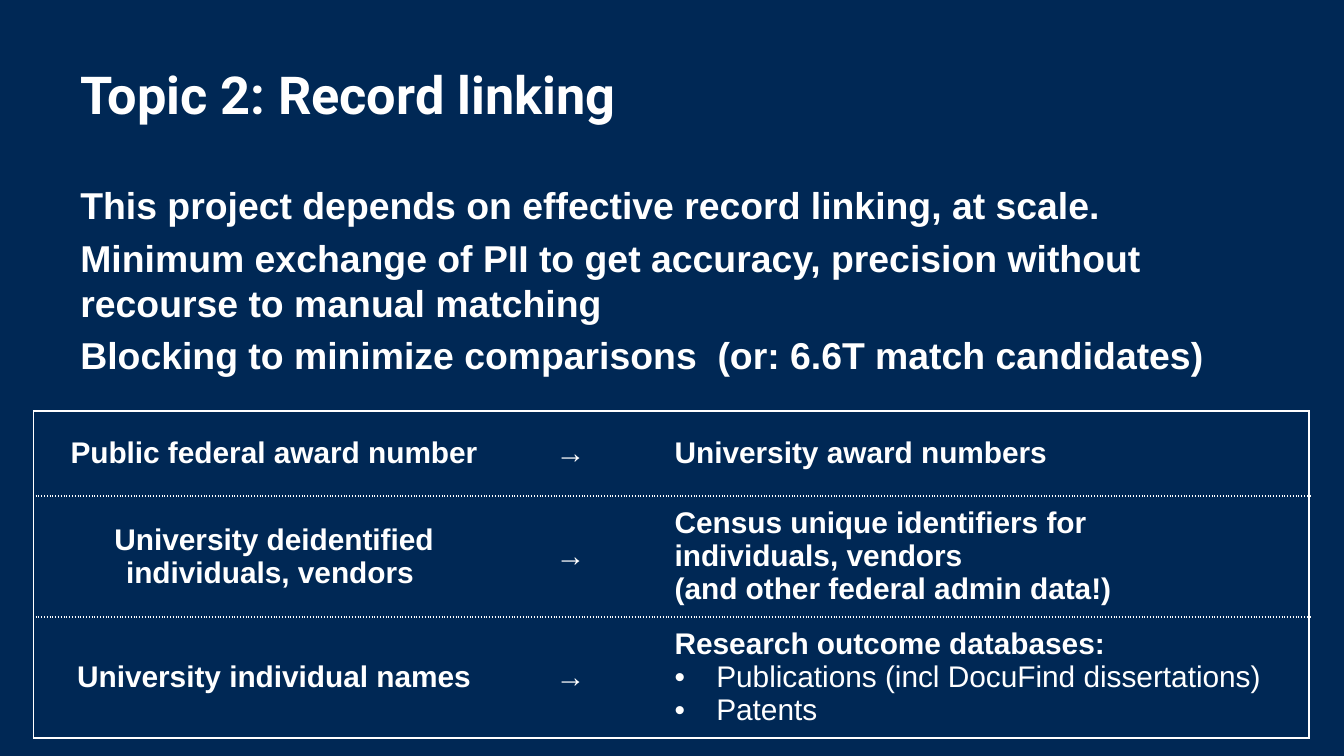
from lxml.etree import SubElement
from pptx import Presentation
from pptx.dml.color import RGBColor
from pptx.enum.text import MSO_ANCHOR as Anchor, PP_ALIGN as Align
from pptx.oxml.ns import qn
from pptx.util import Inches, Pt

NAVY, WHITE = "002855", "FFFFFF"

STATEMENTS = [
    "This project depends on effective record linking, at scale.",
    "Minimum exchange of PII to get accuracy, precision without recourse to manual matching",
    "Blocking to minimize comparisons  (or: 6.6T match candidates)",
]
# Each row: source, targets; targets after the first are bullets.
LINKS = [
    ("Public federal award number", ["University award numbers"]),
    ("University deidentified\vindividuals, vendors ",
     ["Census unique identifiers for \vindividuals, vendors \v(and other federal admin data!)"]),
    ("University individual names",
     ["Research outcome databases:",
      "Publications (incl DocuFind dissertations)", "Patents"]),
]
COLUMN_WIDTHS = [3.58, 0.83, 5.08]
ROW_HEIGHTS = [0.63, 0.85, 0.88]


def color(hex_code):
    return RGBColor.from_string(hex_code)


def place(shape, left, top, width, height):
    shape.left, shape.top = Inches(left), Inches(top)
    shape.width, shape.height = Inches(width), Inches(height)


def format_runs(para, size, font="Arial", bold=True):
    for span in para.runs:
        span.font.name, span.font.size, span.font.bold = font, Pt(size), bold
        span.font.color.rgb = color(WHITE)


def set_indent(para, left, first=0, bullet=None):
    props = para._p.get_or_add_pPr()
    props.set("marL", str(Inches(left)))
    props.set("indent", str(Inches(first)))
    if bullet:
        SubElement(props, qn("a:buFont"), typeface="Arial")
        SubElement(props, qn("a:buChar"), char=bullet)


def set_borders(cell, **dashes):
    """Draw the sides given as L, R, T, B with a dash style; None hides a side."""
    props = cell._tc.get_or_add_tcPr()
    for position, side in enumerate("LRTB"):
        line = SubElement(props, qn("a:ln" + side), w=str(Pt(1)))
        props.insert(position, line)
        dash = dashes.get(side)
        if dash:
            fill = SubElement(line, qn("a:solidFill"))
            SubElement(fill, qn("a:srgbClr"), val=WHITE)
            SubElement(line, qn("a:prstDash"), val=dash)
        else:
            SubElement(line, qn("a:noFill"))


def add_title(page, text, box):
    title = page.shapes.title
    place(title, *box)
    frame = title.text_frame
    frame.text = text
    frame.vertical_anchor = Anchor.MIDDLE
    para = frame.paragraphs[0]
    para.alignment = Align.LEFT
    format_runs(para, 28, "Roboto")


def add_statements(page, lines, box):
    frame = page.shapes.add_textbox(*map(Inches, box)).text_frame
    frame.word_wrap = True
    frame.text = "\n".join(lines)
    for para in frame.paragraphs:
        para.space_before = Pt(4)
        format_runs(para, 20)


def fill_cell(cell, lines, centered):
    cell.fill.solid()
    cell.fill.fore_color.rgb = color(NAVY)
    cell.vertical_anchor = Anchor.MIDDLE
    frame = cell.text_frame
    frame.text = "\n".join(lines)
    for number, para in enumerate(frame.paragraphs):
        format_runs(para, 16, bold=number == 0)
        if centered:
            para.alignment = Align.CENTER
        elif number:
            set_indent(para, 0.57, -0.31, "•")
        else:
            set_indent(para, 0.26)


def add_link_table(page, links, box):
    last_row, last_column = len(links) - 1, len(COLUMN_WIDTHS) - 1
    table = page.shapes.add_table(len(links), len(COLUMN_WIDTHS), *map(Inches, box)).table
    table.first_row = table.horz_banding = False
    for column, width in zip(table.columns, COLUMN_WIDTHS):
        column.width = Inches(width)
    for row, height in zip(table.rows, ROW_HEIGHTS):
        row.height = Inches(height)
    for r, (source, targets) in enumerate(links):
        for c, lines in enumerate([[source], ["→"], targets]):
            cell = table.cell(r, c)
            fill_cell(cell, lines, centered=c < last_column)
            set_borders(cell,
                        L="solid" if c == 0 else None,
                        R="solid" if c == last_column else None,
                        T="solid" if r == 0 else "sysDot",
                        B="solid" if r == last_row else "sysDot")


def main():
    deck = Presentation()
    deck.slide_width = Inches(10)
    deck.slide_height = deck.slide_width * 9 // 16
    page = deck.slides.add_slide(deck.slide_layouts[5])
    page.background.fill.solid()
    page.background.fill.fore_color.rgb = color(NAVY)
    add_title(page, "Topic 2: Record linking", (0.5, 0.23, 9, 0.94))
    add_statements(page, STATEMENTS, (0.5, 1.31, 9, 1.67))
    add_link_table(page, LINKS, (0.25, 3.06, 9.5, 2.43))
    deck.save("out.pptx")


if __name__ == "__main__":
    main()
